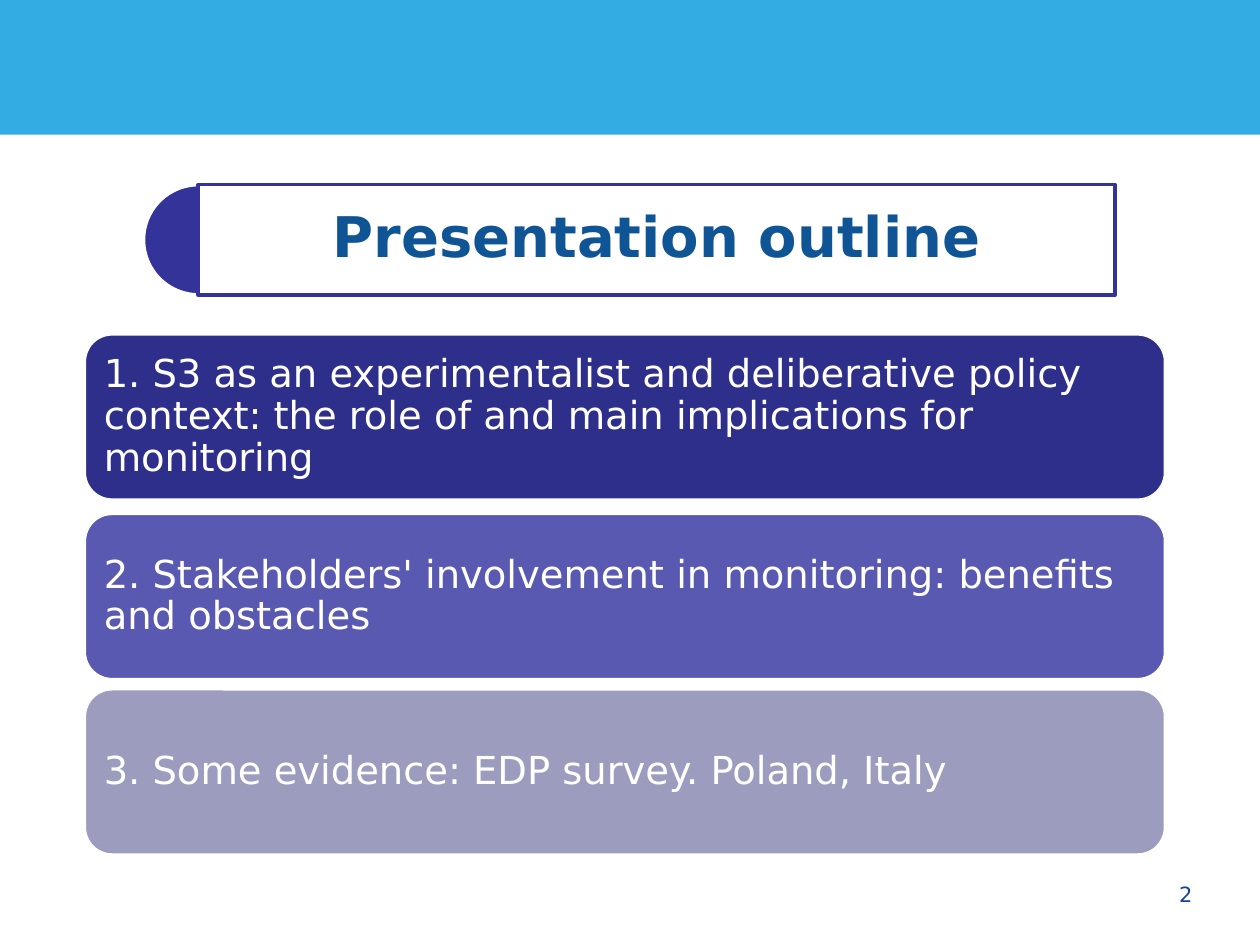
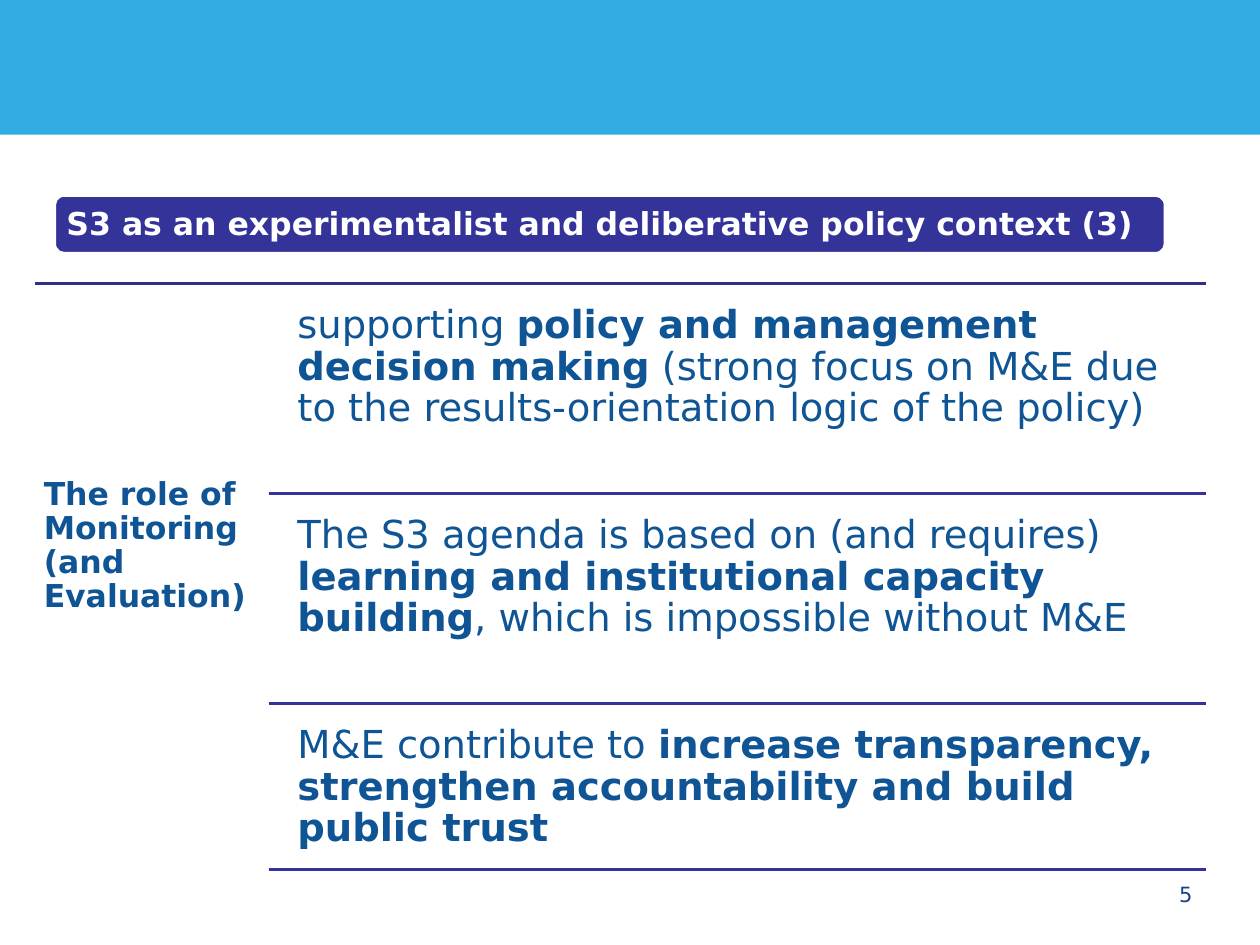
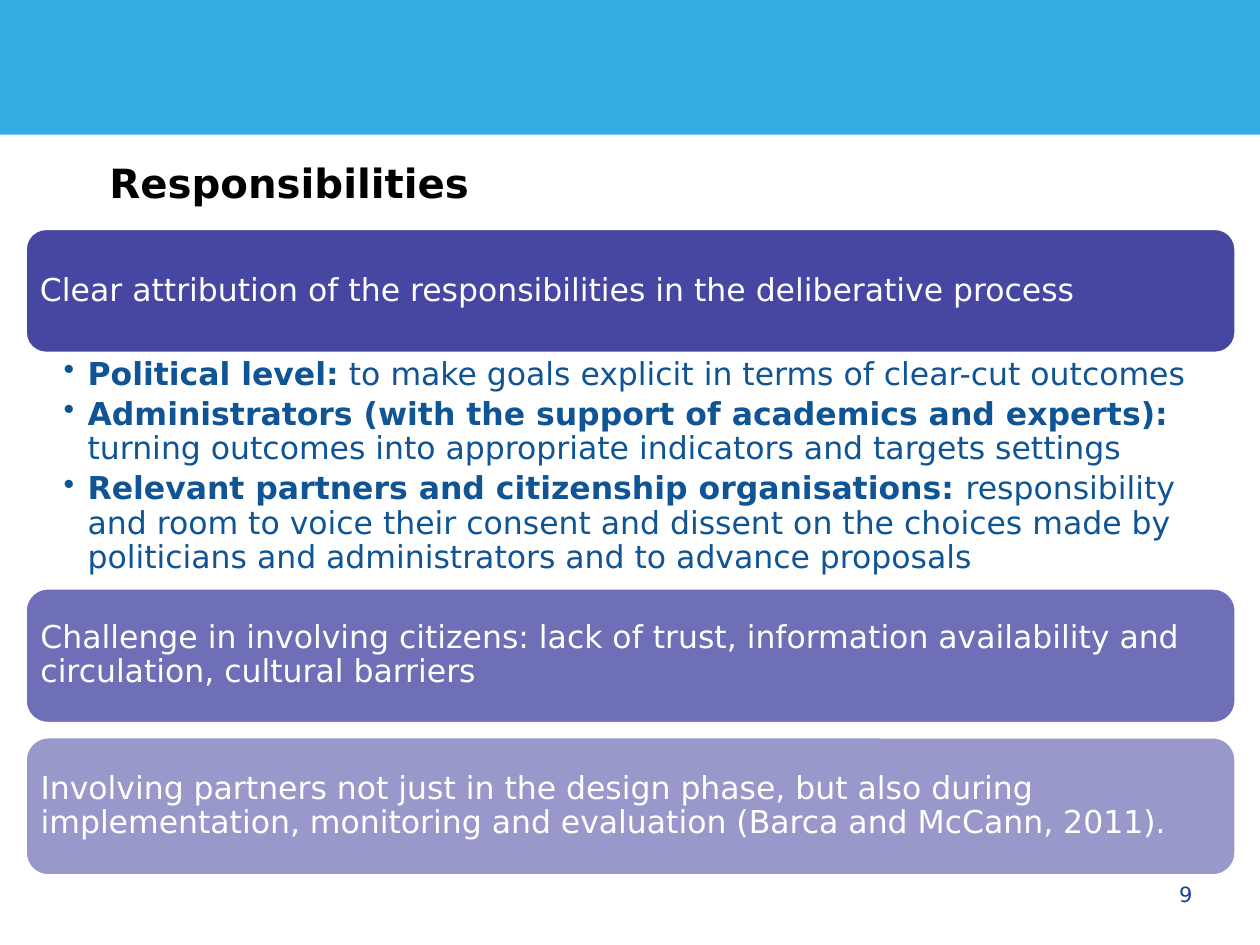
"""Builds three slides on the role of monitoring in S3 policy."""
from dataclasses import dataclass
from typing import NamedTuple

from lxml.etree import SubElement
from pptx import Presentation
from pptx.dml.color import RGBColor
from pptx.enum.shapes import MSO_CONNECTOR, MSO_SHAPE
from pptx.enum.text import MSO_ANCHOR, MSO_AUTO_SIZE, PP_ALIGN
from pptx.oxml.ns import qn
from pptx.util import Pt


@dataclass(frozen=True)
class Theme:
    font: str = "DejaVu Sans"
    sky: str = "33ACE3"
    indigo: str = "333399"
    deep: str = "2E2E8B"
    violet: str = "5959B1"
    mist: str = "9C9CBF"
    text: str = "0F5494"
    number: str = "164194"
    white: str = "FFFFFF"
    black: str = "000000"
    outline_size: float = 32
    heading_size: float = 23
    large_size: float = 22
    body_size: float = 18
    number_size: float = 12
    line_width: float = 2
    line_spacing: float = 0.9


T = Theme()


class Box(NamedTuple):
    left: float
    top: float
    width: float
    height: float

    def lengths(self) -> list:
        return [Pt(v) for v in self]


@dataclass(frozen=True)
class Style:
    size: float
    color: str = T.text
    bold: bool = False
    align: PP_ALIGN = PP_ALIGN.LEFT
    anchor: MSO_ANCHOR = MSO_ANCHOR.TOP
    insets: tuple = (5, 5, 5, 5)
    spacing: float = T.line_spacing
    bullet: bool = False


@dataclass(frozen=True)
class Card:
    box: Box
    text: str
    fill: str = T.indigo
    opacity: int = 100


LARGE = Style(T.large_size, insets=(6.5,) * 4)
LARGE_CARD = Style(T.large_size, T.white, anchor=MSO_ANCHOR.MIDDLE, insets=(6.5,) * 4)
BODY_CARD = Style(T.body_size, T.white, anchor=MSO_ANCHOR.MIDDLE)
SIDE = Style(T.body_size, bold=True)
BULLETS = Style(T.body_size, insets=(22, 2.3, 10, 2.3), bullet=True)
NUMBER = Style(T.number_size, T.number, align=PP_ALIGN.RIGHT,
               anchor=MSO_ANCHOR.MIDDLE, insets=(7.2, 0, 7.2, 0), spacing=1)


def rgb(color: str) -> RGBColor:
    return RGBColor.from_string(color)


def add_bullet(p) -> None:
    pPr = p._p.get_or_add_pPr()
    pPr.set("marL", str(Pt(13.7)))
    pPr.set("indent", str(-Pt(13.7)))
    SubElement(pPr, qn("a:buChar")).set("char", "•")


def write(sp, paragraphs: list[str], style: Style) -> None:
    """Fills a shape with paragraphs, where ** marks the bold parts."""
    tf = sp.text_frame
    tf.auto_size = MSO_AUTO_SIZE.NONE
    tf.word_wrap = True
    tf.vertical_anchor = style.anchor
    tf.margin_left, tf.margin_top, tf.margin_right, tf.margin_bottom = map(Pt, style.insets)
    for i, text in enumerate(paragraphs):
        p = tf.add_paragraph() if i else tf.paragraphs[0]
        if style.bullet:
            add_bullet(p)
            p.space_after = Pt(3.6)
        p.alignment = style.align
        p.line_spacing = style.spacing
        for j, part in enumerate(text.split("**")):
            if not part:
                continue
            r = p.add_run()
            r.text = part
            r.font.name = T.font
            r.font.size = Pt(style.size)
            r.font.bold = style.bold or j % 2 == 1
            r.font.color.rgb = rgb(style.color)


def add_text(s, box: Box, paragraphs: list[str], style: Style) -> None:
    write(s.shapes.add_textbox(*box.lengths()), paragraphs, style)


def add_filled(s, kind: MSO_SHAPE, box: Box, fill: str, line: str | None = T.white,
               opacity: int = 100):
    sp = s.shapes.add_shape(kind, *box.lengths())
    sp.shadow.inherit = False
    sp.fill.solid()
    sp.fill.fore_color.rgb = rgb(fill)
    if opacity < 100:
        color = sp.element.spPr.find(qn("a:solidFill"))[0]
        SubElement(color, qn("a:alpha")).set("val", str(opacity * 1000))
    if line:
        sp.line.color.rgb = rgb(line)
        sp.line.width = Pt(T.line_width)
    else:
        sp.line.fill.background()
    return sp


def add_cards(s, cards: list[Card], style: Style) -> None:
    for card in cards:
        sp = add_filled(s, MSO_SHAPE.ROUNDED_RECTANGLE, card.box, card.fill,
                        opacity=card.opacity)
        write(sp, [card.text], style)


def add_rule(s, left: float, right: float, y: float, color: str) -> None:
    line = s.shapes.add_connector(MSO_CONNECTOR.STRAIGHT, Pt(left), Pt(y), Pt(right), Pt(y))
    line.line.color.rgb = rgb(color)
    line.line.width = Pt(T.line_width)
    SubElement(line.element.spPr, qn("a:effectLst"))


def set_title(s, box: Box, text: str, style: Style) -> None:
    """Places the title above everything drawn so far."""
    title = s.shapes.title
    title.left, title.top, title.width, title.height = box.lengths()
    write(title, [text], style)
    title.element.getparent().append(title.element)


def new_slide(prs, number: int):
    s = prs.slides.add_slide(prs.slide_layouts[5])
    add_filled(s, MSO_SHAPE.RECTANGLE, Box(0, 0, 720, 77), T.sky, None)
    add_text(s, Box(520.5, 496.8, 168, 28.8), [str(number)], NUMBER)
    return s


def outline_slide(prs) -> None:
    s = new_slide(prs, 2)
    pie = add_filled(s, MSO_SHAPE.PIE, Box(82, 105.5, 63, 63), T.indigo)
    pie.adjustments[0], pie.adjustments[1] = 54, 162
    frame = Box(113.3, 105.5, 524, 63)
    add_filled(s, MSO_SHAPE.RECTANGLE, frame, T.white, T.indigo, 90)
    set_title(s, frame, "Presentation outline",
              Style(T.outline_size, bold=True, align=PP_ALIGN.CENTER,
                    anchor=MSO_ANCHOR.MIDDLE, insets=(9.4,) * 4))
    topics = [
        (190.8, T.deep, "1. S3 as an experimentalist and deliberative policy context: "
                        "the role of and main implications for monitoring"),
        (293.4, T.violet, "2. Stakeholders' involvement in monitoring: benefits and obstacles"),
        (393.6, T.mist, "3. Some evidence: EDP survey. Poland, Italy"),
    ]
    add_cards(s, [Card(Box(48.2, top, 617.8, 95), text, fill) for top, fill, text in topics],
              LARGE_CARD)


def role_slide(prs) -> None:
    s = new_slide(prs, 5)
    add_filled(s, MSO_SHAPE.ROUNDED_RECTANGLE, Box(31, 111.5, 635, 33.5), T.indigo)
    set_title(s, Box(33, 113, 631.5, 31), "S3 as an experimentalist and deliberative policy context (3)",
              Style(T.body_size, T.white, True, anchor=MSO_ANCHOR.MIDDLE))
    add_text(s, Box(20, 268.5, 134, 92), ["The role of Monitoring (and Evaluation)"], SIDE)
    roles = [
        "supporting **policy and management decision making** (strong focus on M&E due "
        "to the results-orientation logic of the policy)",
        "The S3 agenda is based on (and requires) **learning and institutional capacity "
        "building**, which is impossible without M&E",
        "M&E contribute to **increase transparency, strengthen accountability and build "
        "public trust**",
    ]
    top, pitch, right = 162, 120, 689
    bottoms = [top + pitch, top + 2 * pitch, 496.8]
    add_rule(s, 20, right, top, T.deep)
    for i, (role, bottom) in enumerate(zip(roles, bottoms)):
        row = top + i * pitch
        add_text(s, Box(163.5, row + 6, 525, bottom - row - 6), [role], LARGE)
        add_rule(s, 153.5, right, bottom, T.indigo)


def responsibilities_slide(prs) -> None:
    s = new_slide(prs, 9)
    set_title(s, Box(55.5, 85.5, 558, 40.5), "Responsibilities",
              Style(T.heading_size, T.black, True, anchor=MSO_ANCHOR.MIDDLE, insets=(7,) * 4))
    left, width = 14.4, 692
    add_cards(s, [
        Card(Box(left, 130.5, width, 71.5),
             "Clear attribution of the responsibilities in the deliberative process", opacity=90),
        Card(Box(left, 336, width, 77.5),
             "Challenge in involving citizens: lack of trust, information availability and "
             "circulation, cultural barriers", opacity=70),
        Card(Box(left, 421, width, 79.5),
             "Involving partners not just in the design phase, but also during implementation, "
             "monitoring and evaluation (Barca and McCann, 2011).", opacity=50),
    ], BODY_CARD)
    add_text(s, Box(left, 202.3, width, 133.2), [
        "**Political level:** to make goals explicit in terms of clear-cut outcomes",
        "**Administrators (with the support of academics and experts): **turning outcomes "
        "into appropriate indicators and targets settings",
        "**Relevant partners and citizenship organisations: **responsibility and room to "
        "voice their consent and dissent on the choices made by politicians and "
        "administrators and to advance proposals",
    ], BULLETS)


def main() -> None:
    prs = Presentation()
    prs.slide_width, prs.slide_height = Pt(720), Pt(540)
    outline_slide(prs)
    role_slide(prs)
    responsibilities_slide(prs)
    prs.save("out.pptx")


if __name__ == "__main__":
    main()
